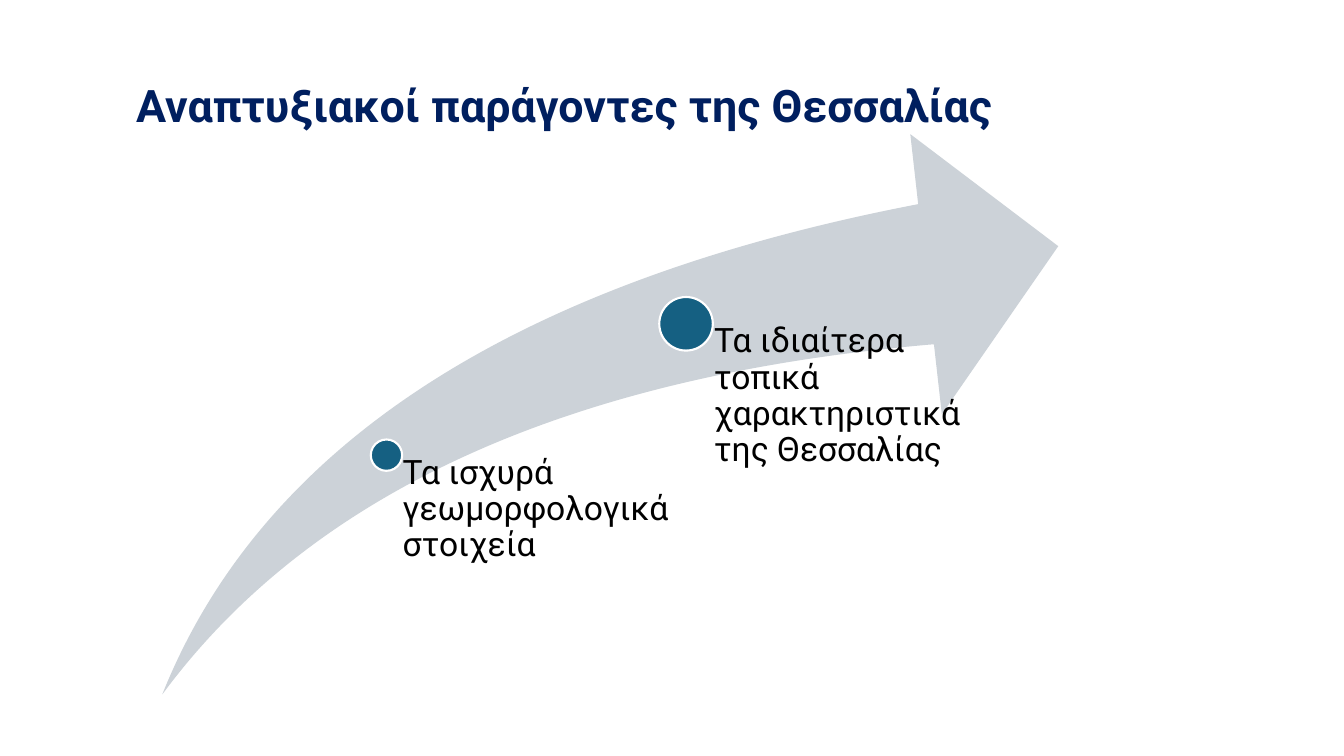
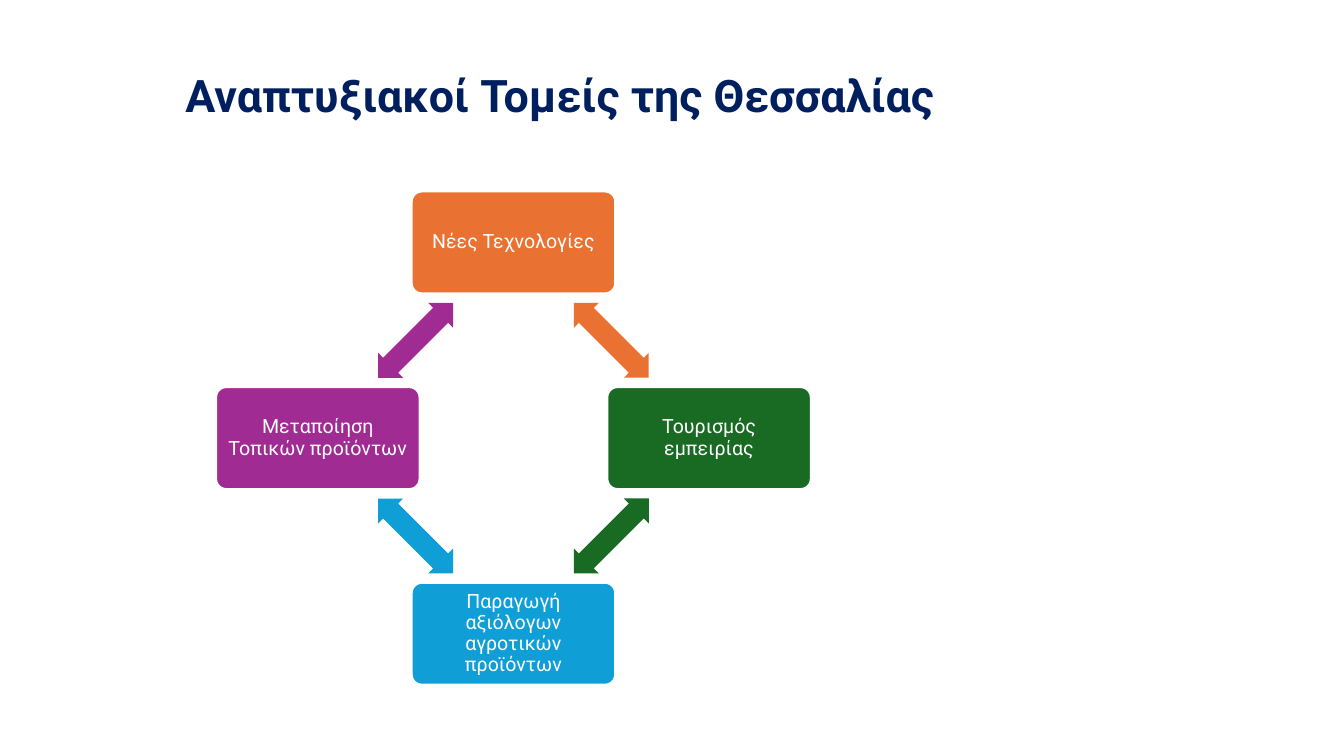
from dataclasses import dataclass
from math import cos, radians, sin

from pptx import Presentation
from pptx.dml.color import RGBColor
from pptx.enum.shapes import MSO_SHAPE as Preset
from pptx.enum.text import MSO_ANCHOR as Anchor
from pptx.enum.text import MSO_AUTO_SIZE as AutoSize
from pptx.enum.text import PP_ALIGN as Align
from pptx.util import Cm, Pt


@dataclass(frozen=True)
class Theme:
    font: str = "Roboto"
    navy: str = "001F5F"
    black: str = "000000"
    white: str = "FFFFFF"
    grey: str = "CCD2D8"
    teal: str = "156082"
    orange: str = "E97132"
    green: str = "196B24"
    blue: str = "0F9ED5"
    purple: str = "A02B93"
    title_size: int = 32
    label_size: int = 24
    box_size: int = 14
    outline: float = 1.5


theme = Theme()


def write_text(shape, text, *, size, color, bold=False, align=Align.LEFT,
               anchor=Anchor.TOP, insets=(0.25, 0.13, 0.25, 0.13)):
    """Fill a shape with one paragraph; insets are left, top, right, bottom in cm."""
    frame = shape.text_frame
    frame.auto_size = AutoSize.NONE
    frame.word_wrap = True
    frame.vertical_anchor = anchor
    frame.margin_left, frame.margin_top, frame.margin_right, frame.margin_bottom = map(Cm, insets)
    paragraph = frame.paragraphs[0]
    paragraph.alignment = align
    paragraph.line_spacing = 0.9
    run = paragraph.add_run()
    run.text = text
    run.font.name = theme.font
    run.font.size = Pt(size)
    run.font.bold = bold
    run.font.color.rgb = RGBColor.from_string(color)


def add_centred_shape(slide, preset, center, size, fill, *, outlined=False,
                      adjustments=(), rotation=0):
    """Add a filled preset shape around a center; center and size are in cm."""
    (x, y), (width, height) = center, size
    shape = slide.shapes.add_shape(
        preset, Cm(x - width / 2), Cm(y - height / 2), Cm(width), Cm(height))
    shape.shadow.inherit = False
    shape.fill.solid()
    shape.fill.fore_color.rgb = RGBColor.from_string(fill)
    if outlined:
        shape.line.color.rgb = RGBColor.from_string(theme.white)
        shape.line.width = Pt(theme.outline)
    else:
        shape.line.fill.background()
    for index, value in enumerate(adjustments):
        shape.adjustments[index] = value
    shape.rotation = rotation
    return shape


presentation = Presentation()
presentation.slide_width = Cm(33.87)
presentation.slide_height = Cm(19.05)
title_only = presentation.slide_layouts[5]

# Titles: text, left, top, width
titles = [
    ("Αναπτυξιακοί παράγοντες της Θεσσαλίας", 3.18, 0.89, 29.21),
    ("Αναπτυξιακοί Τομείς της Θεσσαλίας", 4.42, 0.64, 25.02),
]
slides = []
for text, left, top, width in titles:
    slide = presentation.slides.add_slide(title_only)
    title = slide.shapes.title
    title.left, title.top, title.width, title.height = Cm(left), Cm(top), Cm(width), Cm(3.68)
    write_text(title, text, size=theme.title_size, color=theme.navy, bold=True,
               anchor=Anchor.MIDDLE)
    slides.append(slide)
factors_slide, sectors_slide = slides

# Development factors along a rising arrow
arrow_bottom = 17.5
add_centred_shape(factors_slide, Preset.SWOOSH_ARROW, (15.38, 10.44), (22.58, 14.12),
                  theme.grey, adjustments=(0.25, 0.25))

# Label, dot center, dot diameter, label indent
factors = [
    ("Τα ισχυρά γεωμορφολογικά στοιχεία", (9.74, 11.47), 0.79, 0.41),
    ("Τα ιδιαίτερα τοπικά χαρακτηριστικά της Θεσσαλίας", (17.29, 8.16), 1.35, 0.71),
]
for text, (x, y), diameter, indent in factors:
    add_centred_shape(factors_slide, Preset.OVAL, (x, y), (diameter, diameter),
                      theme.teal, outlined=True)
    label = factors_slide.shapes.add_textbox(Cm(x), Cm(y), Cm(7.34), Cm(arrow_bottom - y))
    write_text(label, text, size=theme.label_size, color=theme.black, insets=(indent, 0, 0, 0))

# Development sectors in a ring, clockwise from the top
ring_x, ring_y, ring_radius = 12.94, 11.04, 4.93
sectors = [
    ("Νέες Τεχνολογίες", theme.orange),
    ("Τουρισμός εμπειρίας", theme.green),
    ("Παραγωγή αξιόλογων αγροτικών προϊόντων", theme.blue),
    ("Μεταποίηση Τοπικών προϊόντων", theme.purple),
]
step = 360 / len(sectors)
arrow_radius = ring_radius * cos(radians(step / 2))
for index, (text, color) in enumerate(sectors):
    box_angle = index * step
    arrow_angle = box_angle + step / 2
    box_center, arrow_center = [
        (ring_x + radius * sin(radians(angle)), ring_y - radius * cos(radians(angle)))
        for angle, radius in ((box_angle, ring_radius), (arrow_angle, arrow_radius))
    ]
    box = add_centred_shape(sectors_slide, Preset.ROUNDED_RECTANGLE, box_center, (5.13, 2.57),
                            color, outlined=True, adjustments=(0.1,))
    write_text(box, text, size=theme.box_size, color=theme.white, align=Align.CENTER,
               anchor=Anchor.MIDDLE, insets=(0.15,) * 4)
    add_centred_shape(sectors_slide, Preset.LEFT_RIGHT_ARROW, arrow_center, (2.67, 0.89),
                      color, adjustments=(0.6, 0.5), rotation=arrow_angle)

presentation.save("out.pptx")
